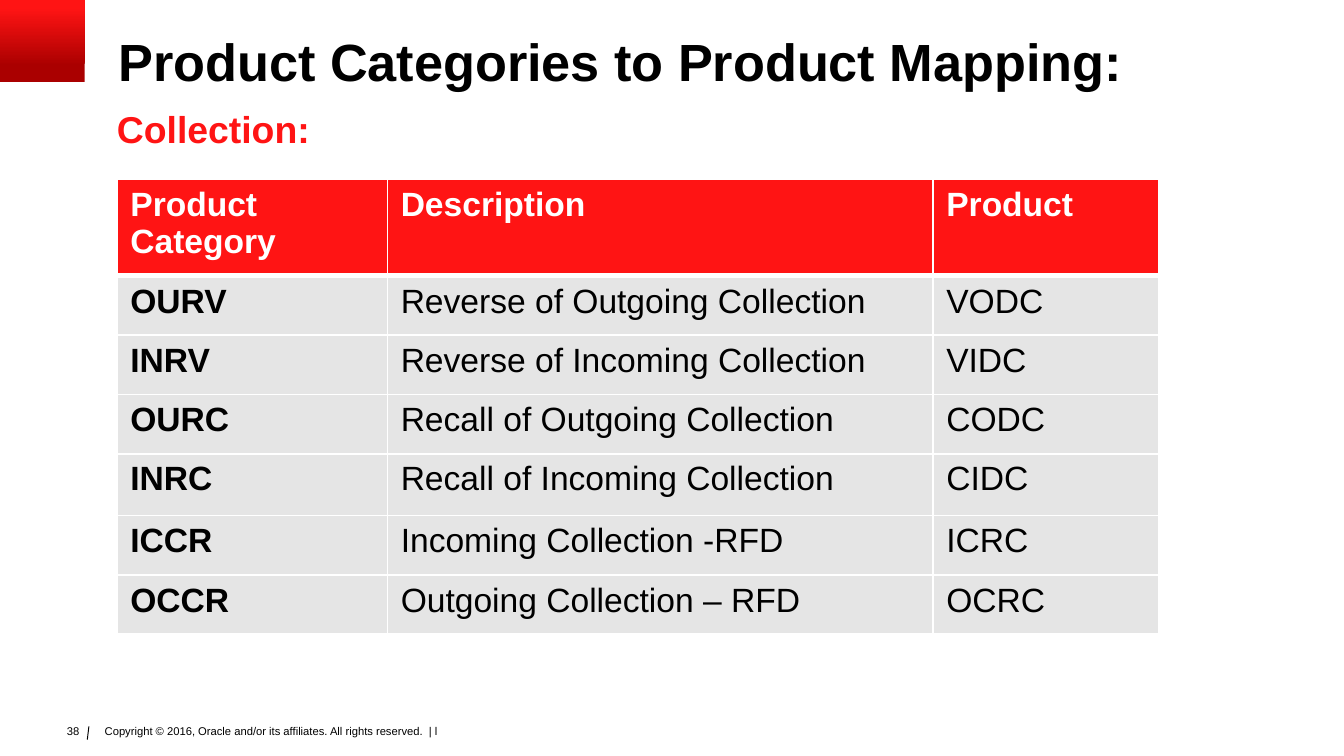
from lxml import etree
from pptx import Presentation
from pptx import util as u
from pptx.dml.color import RGBColor
from pptx.enum import shapes, text
from pptx.oxml.ns import qn

Cm, Pt = u.Cm, u.Pt
COLORS = {"red": "FF1414", "dark_red": "AA0000", "grey": "E5E5E5",
          "black": "000000", "white": "FFFFFF"}
HEADER = ("Product Category", "Description", "Product")
PRODUCTS = [
    ("OURV", "Reverse of Outgoing Collection", "VODC"),
    ("INRV", "Reverse of Incoming Collection", "VIDC"),
    ("OURC", "Recall of Outgoing Collection", "CODC"),
    ("INRC", "Recall of Incoming Collection", "CIDC"),
    ("ICCR", "Incoming Collection -RFD", "ICRC"),
    ("OCCR", "Outgoing Collection – RFD", "OCRC"),
]
COL_WIDTHS = (5.11, 10.31, 4.27)
ROW_HEIGHTS = (1.83, 1.12, 1.12, 1.12, 1.17, 1.12, 1.12)


def rgb(name):
    return RGBColor.from_string(COLORS[name])


def write(tf, words, size, color="black", bold=False):
    tf.text = words
    p = tf.paragraphs[0]
    p.font.name = "Arial"
    p.font.size = Pt(size)
    p.font.bold = bold
    p.font.color.rgb = rgb(color)
    return p


def set_margins(tf, x, y):
    tf.margin_left = tf.margin_right = Cm(x)
    tf.margin_top = tf.margin_bottom = Cm(y)


def add_label(s, box, words, size, color="black", bold=False, margins=(0, 0)):
    tf = s.shapes.add_textbox(*map(Cm, box)).text_frame
    tf.word_wrap = True
    set_margins(tf, *margins)
    write(tf, words, size, color, bold)
    return tf


def add_corner(s, box):
    sp = s.shapes.add_shape(shapes.MSO_SHAPE.RECTANGLE, *map(Cm, box))
    sp.shadow.inherit = False
    sp.line.fill.background()
    sp.fill.gradient()
    sp.fill.gradient_angle = 90
    stops = ((0.2, "dark_red"), (0.9, "red"))
    for stop, (position, color) in zip(sp.fill.gradient_stops, stops):
        stop.position = position
        stop.color.rgb = rgb(color)


def add_heading(s, box):
    x, y, w, h = box
    title = s.shapes.title
    title.left, title.top, title.width, title.height = map(Cm, (x, y, w, 1.22))
    tf = title.text_frame
    tf.word_wrap = True
    tf.auto_size = text.MSO_AUTO_SIZE.NONE
    tf.vertical_anchor = text.MSO_ANCHOR.TOP
    set_margins(tf, 0, 0)
    p = write(tf, "Product Categories to Product Mapping:", 28, bold=True)
    p.alignment = text.PP_ALIGN.LEFT
    p.line_spacing = 0.9
    add_label(s, (x - 0.03, y + 1.32, w, h - 1.32), "Collection:", 20, "red", True)


def set_border(cell, side, width):
    ln = etree.SubElement(cell._tc.get_or_add_tcPr(), qn("a:ln" + side),
                          w=str(Pt(width)))
    fill = etree.SubElement(ln, qn("a:solidFill"))
    etree.SubElement(fill, qn("a:srgbClr"), val=COLORS["white"])


def add_product_table(s, box):
    rows = [HEADER] + PRODUCTS
    table = s.shapes.add_table(len(rows), len(HEADER), *map(Cm, box)).table
    table.horz_banding = False
    for column, width in zip(table.columns, COL_WIDTHS):
        column.width = Cm(width)
    for r, (row, height) in enumerate(zip(rows, ROW_HEIGHTS)):
        table.rows[r].height = Cm(height)
        header = r == 0
        for c, words in enumerate(row):
            cell = table.cell(r, c)
            for side in "LRTB":
                thick = (header and side == "B") or (r == 1 and side == "T")
                set_border(cell, side, 3 if thick else 1)
            cell.fill.solid()
            cell.fill.fore_color.rgb = rgb("red" if header else "grey")
            write(cell.text_frame, words, 18,
                  "white" if header else "black", header or c == 0)


def add_footer(s, box):
    x, y, w, h = box
    number = add_label(s, (x, y, 0.76, 0.51), "38", 6, margins=(0.25, 0.13))
    number.word_wrap = False
    number.paragraphs[0].alignment = text.PP_ALIGN.RIGHT
    line = s.shapes.add_connector(
        shapes.MSO_CONNECTOR.STRAIGHT,
        Cm(x + 0.69), Cm(y + 0.16), Cm(x + 0.66), Cm(y + 0.41))
    line.line.color.rgb = rgb("black")
    line.line.width = Pt(0.5)
    etree.SubElement(line._element.spPr, qn("a:effectLst"))
    add_label(s, (x + 0.89, y + 0.08, w - 0.89, h - 0.08),
              "Copyright © 2016, Oracle and/or its affiliates. "
              "All rights reserved.  | l", 6, margins=(0.1, 0.05))


def main():
    prs = Presentation()
    prs.slide_width, prs.slide_height = Cm(25.4), Cm(14.28)
    s = prs.slides.add_slide(prs.slide_layouts[5])
    add_footer(s, (0.99, 13.56, 17.48, 0.69))
    add_corner(s, (0, 0, 1.6, 1.55))
    add_heading(s, (2.24, 0.69, 22.86, 2.16))
    add_product_table(s, (2.21, 3.38, sum(COL_WIDTHS), sum(ROW_HEIGHTS)))
    prs.save("out.pptx")


if __name__ == "__main__":
    main()
